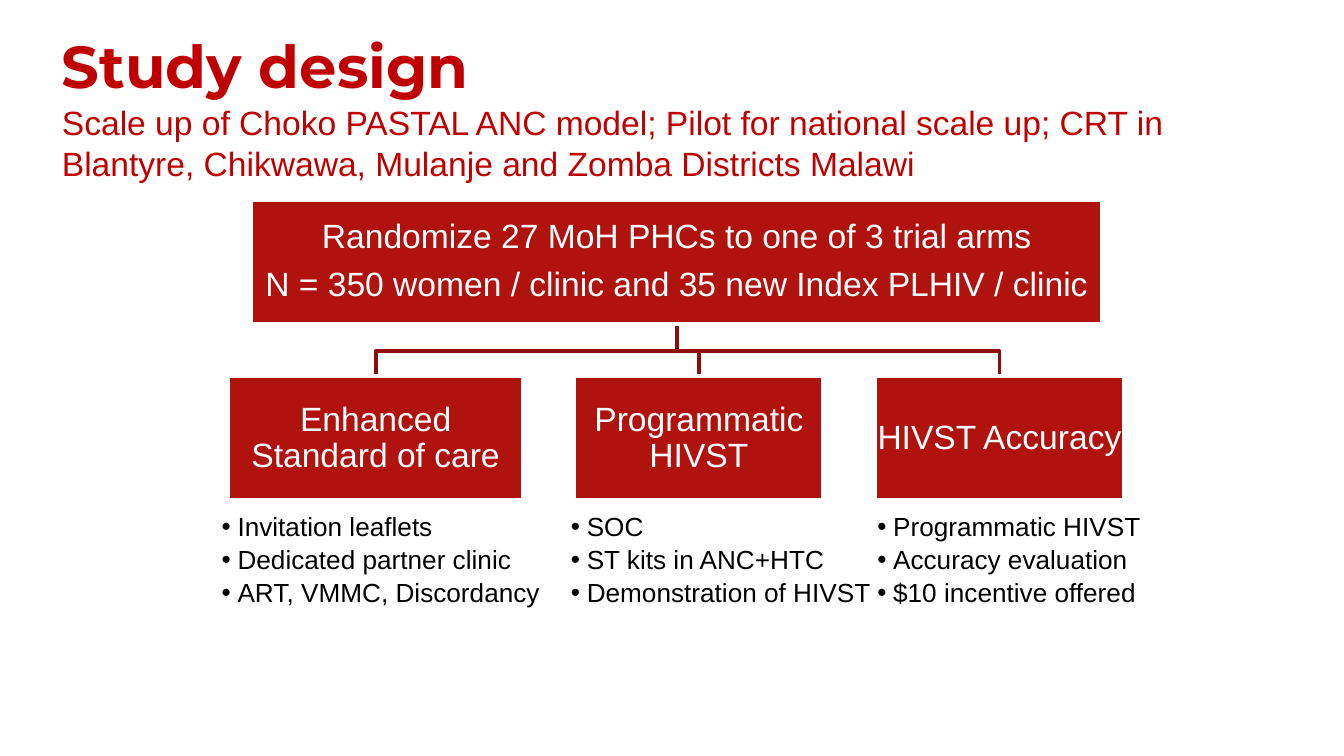
import pptx
import pptx.util
import pptx.dml.color
import pptx.enum.shapes
import pptx.enum.text
from lxml import etree

Cm, Pt = pptx.util.Cm, pptx.util.Pt
PP_ALIGN = pptx.enum.text.PP_ALIGN
ANCHOR = pptx.enum.text.MSO_ANCHOR
COLORS = {"title": "C00000", "box": "B0120E", "branch": "8D0E0B",
          "white": "FFFFFF", "black": "000000"}


def format_runs(p, size, color, font="Arial", bold=False):
    for r in p.runs:
        r.font.size = Pt(size)
        r.font.name = font
        r.font.bold = bold
        r.font.color.rgb = pptx.dml.color.RGBColor.from_string(COLORS[color])


def add_box(s, left, top, width, height, text):
    sp = s.shapes.add_shape(pptx.enum.shapes.MSO_SHAPE.RECTANGLE,
                            Cm(left), Cm(top), Cm(width), Cm(height))
    sp.shadow.inherit = False
    sp.fill.solid()
    sp.fill.fore_color.rgb = pptx.dml.color.RGBColor.from_string(COLORS["box"])
    sp.line.color.rgb = pptx.dml.color.RGBColor.from_string(COLORS["white"])
    sp.line.width = Pt(2)
    tf = sp.text_frame
    tf.word_wrap = True
    tf.vertical_anchor = ANCHOR.MIDDLE
    tf.margin_left = tf.margin_right = tf.margin_top = tf.margin_bottom = Cm(0.03)
    tf.text = text
    for p in tf.paragraphs:
        p.alignment = PP_ALIGN.CENTER
        p.line_spacing = 0.9
        p.space_after = Pt(6.3)
        format_runs(p, 18, "white")


prs = pptx.Presentation()
prs.slide_width, prs.slide_height = Cm(25.4), Cm(14.28)
s = prs.slides.add_slide(prs.slide_layouts[5])

# Title
title = s.shapes.title
title.left, title.top, title.width, title.height = Cm(1.17), Cm(0.48), Cm(23.06), Cm(3.07)
tf = title.text_frame
tf.auto_size = pptx.enum.text.MSO_AUTO_SIZE.NONE
tf.vertical_anchor = ANCHOR.MIDDLE
tf.margin_left = tf.margin_right = 0
tf.margin_top = tf.margin_bottom = Cm(0.15)
tf.text = ("Study design\nScale up of Choko PASTAL ANC model; Pilot for national scale up; "
           "CRT in Blantyre, Chikwawa, Mulanje and Zomba Districts Malawi")
for p in tf.paragraphs:
    p.alignment = PP_ALIGN.LEFT
    p.space_before = Pt(0)
format_runs(tf.paragraphs[0], 31.7, "title", "Montserrat", True)
format_runs(tf.paragraphs[1], 18, "title")
tf.paragraphs[1].line_spacing = 1.03

# Trial arms: box width, label, left edge of the list, list items
arms = [
    (5.56, "Enhanced Standard of care", 3.94,
     ["Invitation leaflets", "Dedicated partner clinic", "ART, VMMC, Discordancy"]),
    (4.7, "Programmatic HIVST", 10.54,
     ["SOC", "ST kits in ANC+HTC", "Demonstration of HIVST"]),
    (4.7, "HIVST Accuracy", 16.33,
     ["Programmatic HIVST", "Accuracy evaluation", "$10 incentive offered"]),
]
box_height, gap = 2.34, 0.98
root_left, root_top, root_width = 4.75, 3.78, 16.08
root_center, root_bottom = root_left + root_width / 2, root_top + box_height
arm_top, fork = 7.11, 6.63

lefts = [4.32]
for width, *_ in arms[:-1]:
    lefts.append(lefts[-1] + width + gap)

# Branches lie behind the boxes
for left, (width, *_) in zip(lefts, arms):
    center = left + width / 2
    builder = s.shapes.build_freeform(Cm(root_center), Cm(root_bottom))
    builder.add_line_segments([(Cm(root_center), Cm(fork)), (Cm(center), Cm(fork)),
                               (Cm(center), Cm(arm_top))], close=False)
    branch = builder.convert_to_shape()
    branch.shadow.inherit = False
    branch.fill.background()
    branch.line.color.rgb = pptx.dml.color.RGBColor.from_string(COLORS["branch"])
    branch.line.width = Pt(2)

add_box(s, root_left, root_top, root_width, box_height,
        "Randomize 27 MoH PHCs to one of 3 trial arms\n"
        "N = 350 women / clinic and 35 new Index PLHIV / clinic")

for left, (width, label, list_left, items) in zip(lefts, arms):
    add_box(s, left, arm_top, width, box_height, label)

    tf = s.shapes.add_textbox(Cm(list_left), Cm(9.37), Cm(6.58), Cm(2.31)).text_frame
    tf.word_wrap = True
    tf.margin_left = tf.margin_right = tf.margin_top = tf.margin_bottom = Cm(0.25)
    tf.text = "\n".join(items)
    for p in tf.paragraphs:
        p.line_spacing = 1.05
        pPr = p._p.get_or_add_pPr()
        pPr.set("marL", str(Cm(0.3)))
        pPr.set("indent", str(-Cm(0.3)))
        etree.SubElement(pPr, pptx.oxml.ns.qn("a:buFont")).set("typeface", "Arial")
        etree.SubElement(pPr, pptx.oxml.ns.qn("a:buChar")).set("char", "•")
        format_runs(p, 14, "black")

prs.save("out.pptx")
